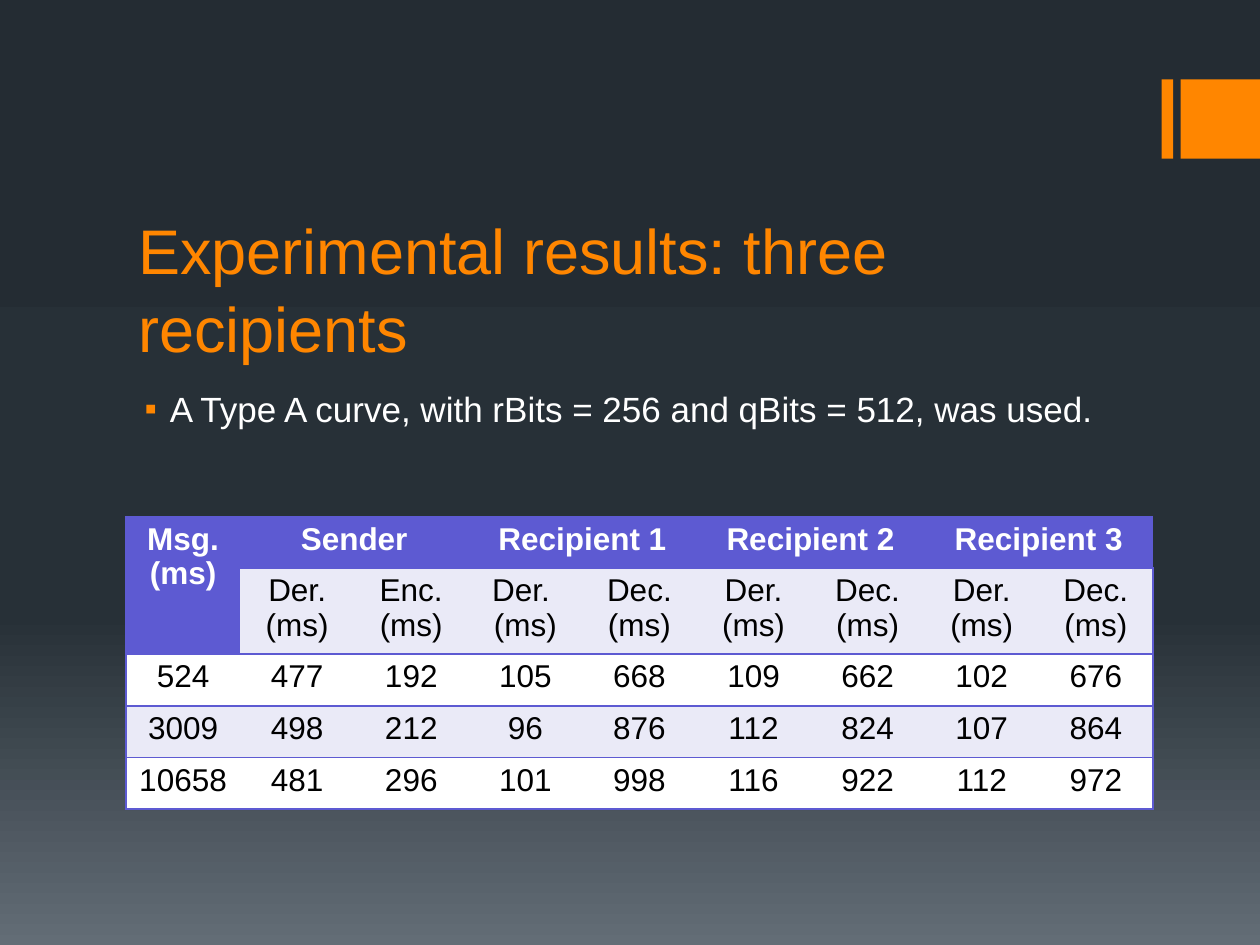
from copy import deepcopy
from lxml.etree import SubElement
from pptx import Presentation
from pptx.dml.color import RGBColor
from pptx.enum.shapes import MSO_SHAPE
from pptx.enum.text import MSO_ANCHOR, PP_ALIGN
from pptx.oxml.ns import qn
from pptx.util import Inches, Pt

ORANGE, WHITE, BLACK = "FF8600", "FFFFFF", "000000"
PURPLE, PALE = "5D5AD2", "EAEAF7"
STOPS = [(0, "242C33"), (0.65, "273037"), (1, "636D76")]
HEADS = ["Sender", "Recipient 1", "Recipient 2", "Recipient 3"]
UNITS = ["Der.", "Enc.", "Der. ", "Dec.", "Der.", "Dec.", "Der.", "Dec."]
DATA = [
    [524, 477, 192, 105, 668, 109, 662, 102, 676],
    [3009, 498, 212, 96, 876, 112, 824, 107, 864],
    [10658, 481, 296, 101, 998, 116, 922, 112, 972],
]
ROWS = [0.41, 0.66, 0.41, 0.41, 0.41]


def color(code):
    return RGBColor.from_string(code)


def write(frame, text, size=18, tint=BLACK, bold=False,
          align=PP_ALIGN.LEFT, space=1.0):
    frame.word_wrap = True
    for i, line in enumerate(text.split("\n")):
        para = frame.add_paragraph() if i else frame.paragraphs[0]
        para.alignment = align
        para.line_spacing = space
        run = para.add_run()
        run.text = line
        font = run.font
        font.name, font.size, font.bold = "Arial", Pt(size), bold
        font.color.rgb = color(tint)


def backdrop(slide):
    fill = slide.background.fill
    fill.gradient()
    fill.gradient_angle = 270
    group = slide.element.find(".//" + qn("a:gsLst"))
    group.append(deepcopy(group[0]))
    for stop, (place, code) in zip(fill.gradient_stops, STOPS):
        stop.position = place
        stop.color.rgb = color(code)


def accent(slide, left, top, width, height):
    thin = 0.09
    for x, w in [(left, thin), (left + width - height, height)]:
        bar = slide.shapes.add_shape(
            MSO_SHAPE.RECTANGLE, Inches(x), Inches(top), Inches(w), Inches(height))
        bar.shadow.inherit = False
        bar.fill.solid()
        bar.fill.fore_color.rgb = color(ORANGE)
        bar.line.fill.background()


def title(slide, left, top, width, height):
    box = slide.shapes.add_textbox(
        Inches(left), Inches(top), Inches(width), Inches(height))
    frame = box.text_frame
    frame.vertical_anchor = MSO_ANCHOR.BOTTOM
    write(frame, "Experimental results: three recipients",
          size=36, tint=ORANGE, space=1.04)


def body(slide, left, top, width, height):
    box = slide.shapes.add_textbox(
        Inches(left), Inches(top), Inches(width), Inches(height))
    frame = box.text_frame
    write(frame, "A Type A curve, with rBits = 256 and qBits = 512, was used.",
          size=20, tint=WHITE)
    para = frame.paragraphs[0]
    para.space_before = Pt(4)
    props = para._p.get_or_add_pPr()
    props.set("marL", str(Inches(0.25)))
    props.set("indent", str(Inches(-0.2)))
    tint = SubElement(props, qn("a:buClr"))
    SubElement(tint, qn("a:srgbClr"), val=ORANGE)
    SubElement(props, qn("a:buFont"), typeface="Arial")
    SubElement(props, qn("a:buChar"), char="▪")


def border(cell, first, last):
    props = cell._tc.get_or_add_tcPr()
    for side, shown in [("L", first), ("R", last), ("T", True), ("B", True)]:
        line = SubElement(props, qn("a:ln" + side), w=str(Pt(1)))
        if shown:
            fill = SubElement(line, qn("a:solidFill"))
            SubElement(fill, qn("a:srgbClr"), val=PURPLE)
        else:
            SubElement(line, qn("a:noFill"))


def results(slide, left, top, width, height):
    heads = ["Msg.\n(ms)"]
    for head in HEADS:
        heads += [head, ""]
    units = [""] + [unit + "\n(ms)" for unit in UNITS]
    grid = [heads, units] + DATA
    count = len(heads)
    table = slide.shapes.add_table(
        len(grid), count, Inches(left), Inches(top),
        Inches(width), Inches(height)).table
    for col in table.columns:
        col.width = Inches(width / count)
    for row, size in zip(table.rows, ROWS):
        row.height = Inches(size)
    table.cell(0, 0).merge(table.cell(1, 0))
    for c in range(1, count, 2):
        table.cell(0, c).merge(table.cell(0, c + 1))
    for r, line in enumerate(grid):
        for c, value in enumerate(line):
            cell = table.cell(r, c)
            head = r == 0 or (r == 1 and c == 0)
            border(cell, c == 0, c == count - 1)
            cell.fill.solid()
            back = PURPLE if head else PALE if r % 2 else WHITE
            cell.fill.fore_color.rgb = color(back)
            if value != "":
                write(cell.text_frame, str(value), bold=head, space=0.97,
                      tint=WHITE if head else BLACK, align=PP_ALIGN.CENTER)


def main():
    deck = Presentation()
    deck.slide_width, deck.slide_height = Inches(10), Inches(7.5)
    slide = deck.slides.add_slide(deck.slide_layouts[6])
    backdrop(slide)
    accent(slide, 9.22, 0.63, 0.78, 0.63)
    title(slide, 1, 1.69, 8, 1.26)
    body(slide, 1, 3.03, 8, 3.87)
    results(slide, 1, 4.1, 8.15, sum(ROWS))
    deck.save("out.pptx")


if __name__ == "__main__":
    main()
